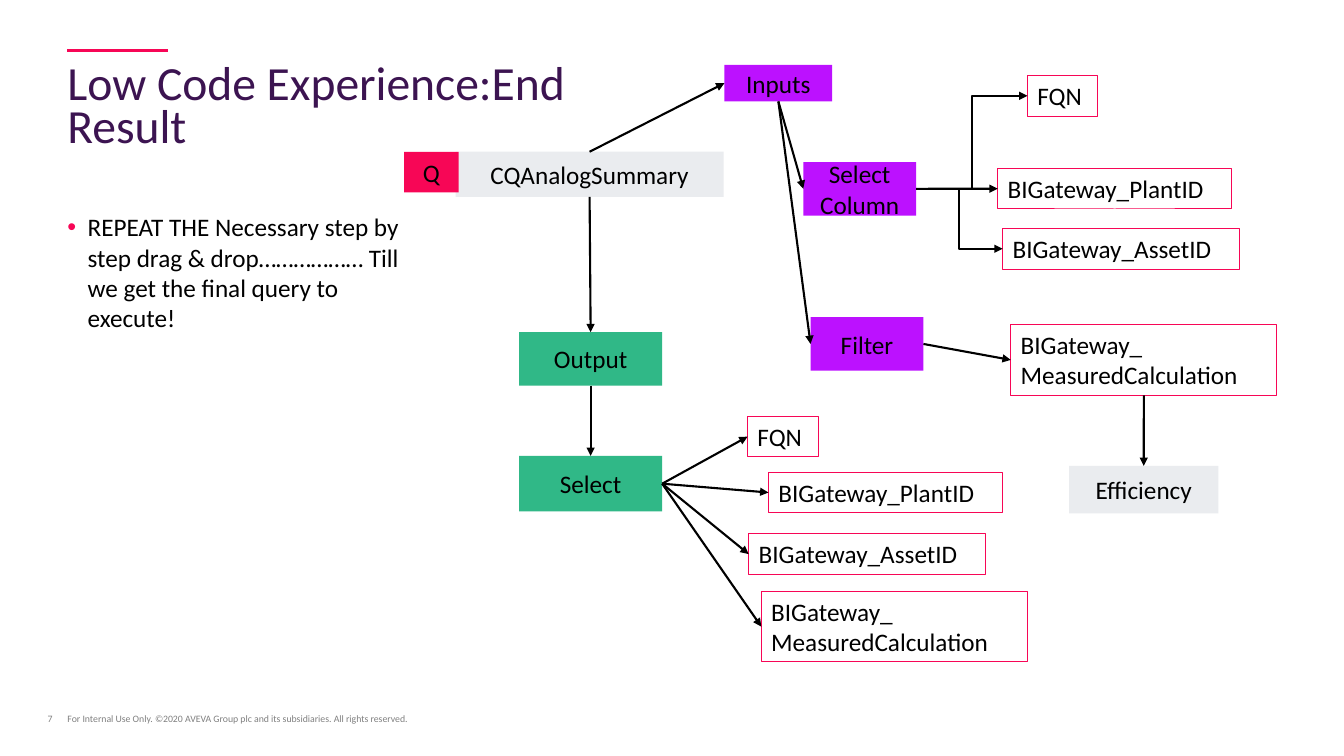
"""Build the low-code query slide: title, note and a connected flow diagram."""
from dataclasses import dataclass

from lxml import etree
from pptx import Presentation
from pptx.dml.color import RGBColor
from pptx.enum.shapes import MSO_CONNECTOR as CONN, MSO_SHAPE
from pptx.enum.text import MSO_ANCHOR as ANCHOR, MSO_AUTO_SIZE, PP_ALIGN as ALIGN
from pptx.oxml.ns import qn
from pptx.util import Pt

BLACK, RED, PURPLE, GREEN, GREY = "000000", "F70656", "BC11FF", "30B887", "EAECEF"
TOP, LEFT, BOTTOM, RIGHT = range(4)


@dataclass
class Node:
    """A filled step of the flow, or an outlined field if it has no fill."""
    key: str
    text: str
    x: float
    y: float
    w: float
    h: float
    fill: str = ""


@dataclass
class Link:
    """An arrow between the connection sites of two nodes."""
    start: str
    start_site: int
    end: str
    end_site: int
    kind: int = CONN.STRAIGHT


PLANT, ASSET = "BIGateway_PlantID", "BIGateway_AssetID"
MEASURED = "BIGateway_\nMeasuredCalculation"

NODES = [
    Node("query", "CQAnalogSummary", 325.4, 108.4, 191.5, 32.2, GREY),
    Node("q", "Q", 288.7, 108.4, 38.9, 29, RED),
    Node("inputs", "Inputs", 517.5, 46.3, 77, 26.2, PURPLE),
    Node("column", "Select\nColumn", 573.8, 115.8, 80.6, 38.2, PURPLE),
    Node("filter", "Filter", 579, 226.6, 80.6, 38.2, PURPLE),
    Node("output", "Output", 370.8, 237.3, 102.2, 38.2, GREEN),
    Node("select", "Select", 370.8, 325.7, 102.2, 39.6, GREEN),
    Node("efficiency", "Efficiency", 763.7, 332.8, 106.6, 34, GREY),
    Node("in_fqn", "FQN", 733.9, 54, 50.4, 29),
    Node("in_plant", PLANT, 712.7, 120.3, 167, 29),
    Node("in_asset", ASSET, 716.2, 163.2, 169.2, 29),
    Node("in_measured", MEASURED, 722, 231.8, 190.1, 50.6),
    Node("out_fqn", "FQN", 534, 297.4, 50.4, 29),
    Node("out_plant", PLANT, 548.9, 337.3, 167, 29),
    Node("out_asset", ASSET, 534.8, 381.3, 169.2, 29),
    Node("out_measured", MEASURED, 543.8, 422.4, 190.1, 50.4),
]

LINKS = [
    Link("query", TOP, "inputs", LEFT),
    Link("query", BOTTOM, "output", TOP),
    Link("output", BOTTOM, "select", TOP),
    Link("inputs", BOTTOM, "column", LEFT),
    Link("inputs", BOTTOM, "filter", LEFT),
    Link("column", RIGHT, "in_fqn", LEFT, CONN.ELBOW),
    Link("column", RIGHT, "in_plant", LEFT),
    Link("column", RIGHT, "in_asset", LEFT, CONN.ELBOW),
    Link("filter", RIGHT, "in_measured", LEFT),
    Link("in_measured", BOTTOM, "efficiency", TOP),
] + [Link("select", RIGHT, f"out_{field}", LEFT)
     for field in ("fqn", "plant", "asset", "measured")]


def rgb(color: str) -> RGBColor:
    """Turn a hex string into a colour."""
    return RGBColor.from_string(color)


def place(sp, x: float, y: float, w: float, h: float) -> None:
    """Move and size a shape in points."""
    sp.left, sp.top, sp.width, sp.height = Pt(x), Pt(y), Pt(w), Pt(h)


def write(sp, text: str, size: float, color: str, align=ALIGN.LEFT,
          anchor=ANCHOR.TOP, inset: bool = False) -> None:
    """Fill a shape with formatted text."""
    tf = sp.text_frame
    tf.text = text
    tf.word_wrap = True
    tf.auto_size = MSO_AUTO_SIZE.NONE
    tf.vertical_anchor = anchor
    if not inset:
        tf.margin_left = tf.margin_right = tf.margin_top = tf.margin_bottom = 0
    for p in tf.paragraphs:
        p.alignment = align
        p.space_before = Pt(0)
        for r in p.runs:
            r.font.name = "Calibri"
            r.font.size = Pt(size)
            r.font.color.rgb = rgb(color)


def add_bullet(p, color: str, indent: float) -> None:
    """Give a paragraph a coloured hanging bullet."""
    pPr = p._p.get_or_add_pPr()
    pPr.set("marL", str(Pt(indent)))
    pPr.set("indent", str(-Pt(indent)))
    clr = etree.SubElement(pPr, qn("a:buClr"))
    etree.SubElement(clr, qn("a:srgbClr"), val=color)
    etree.SubElement(pPr, qn("a:buFont"), typeface="Arial")
    etree.SubElement(pPr, qn("a:buChar"), char="•")


def style_line(cxn, color: str, width: float, arrow: bool = False) -> None:
    """Colour a connector, drop its shadow and add an arrowhead if asked."""
    cxn.line.color.rgb = rgb(color)
    cxn.line.width = Pt(width)
    if arrow:
        etree.SubElement(cxn.line._get_or_add_ln(), qn("a:tailEnd"), type="triangle")
    etree.SubElement(cxn._element.spPr, qn("a:effectLst"))


def add_node(shapes, node: Node):
    """Draw a step or a field."""
    sp = shapes.add_shape(MSO_SHAPE.RECTANGLE, Pt(node.x), Pt(node.y),
                          Pt(node.w), Pt(node.h))
    sp.shadow.inherit = False
    if node.fill:
        sp.fill.solid()
        sp.fill.fore_color.rgb = rgb(node.fill)
        sp.line.fill.background()
        write(sp, node.text, 18, BLACK, ALIGN.CENTER, ANCHOR.MIDDLE, True)
    else:
        sp.fill.background()
        sp.line.color.rgb = rgb(RED)
        sp.line.width = Pt(0.75)
        write(sp, node.text, 18, BLACK, inset=True)
    return sp


def add_link(shapes, link: Link, drawn: dict) -> None:
    """Draw an arrow glued to its two nodes."""
    cxn = shapes.add_connector(link.kind, 0, 0, 0, 0)
    cxn.begin_connect(drawn[link.start], link.start_site)
    cxn.end_connect(drawn[link.end], link.end_site)
    style_line(cxn, BLACK, 1.5, arrow=True)


def main() -> None:
    """Compose and save the slide."""
    prs = Presentation()
    prs.slide_width, prs.slide_height = Pt(960), Pt(540)
    s = prs.slides.add_slide(prs.slide_layouts[1])
    shapes = s.shapes

    title, body = s.placeholders
    place(title, 48.2, 46, 394.6, 63.4)
    write(title, "Low Code Experience:End Result", 34, "3C1451", anchor=ANCHOR.MIDDLE)
    title.text_frame.paragraphs[0].line_spacing = 0.75

    place(body, 48.2, 151.2, 249.8, 326.2)
    write(body, "REPEAT THE Necessary step by step drag & drop……………… "
          "Till we get the final query to execute!", 18, BLACK)
    note = body.text_frame.paragraphs[0]
    add_bullet(note, RED, 14.4)
    note.space_after = Pt(9)

    accent = shapes.add_connector(CONN.STRAIGHT, Pt(48.2), Pt(36), Pt(120.2), Pt(36))
    style_line(accent, RED, 2)

    footer = shapes.add_textbox(Pt(48.2), Pt(492.5), Pt(566), Pt(25.2))
    write(footer, "For Internal Use Only. ©2020 AVEVA Group plc and its subsidiaries. "
          "All rights reserved.", 7, "808080", anchor=ANCHOR.BOTTOM)
    number = shapes.add_textbox(Pt(20.2), Pt(503.3), Pt(17.3), Pt(14.4))
    write(number, "7", 7, "808080", ALIGN.RIGHT, ANCHOR.BOTTOM)

    drawn = {node.key: add_node(shapes, node) for node in NODES}
    for link in LINKS:
        add_link(shapes, link, drawn)
    prs.save("out.pptx")


if __name__ == "__main__":
    main()
